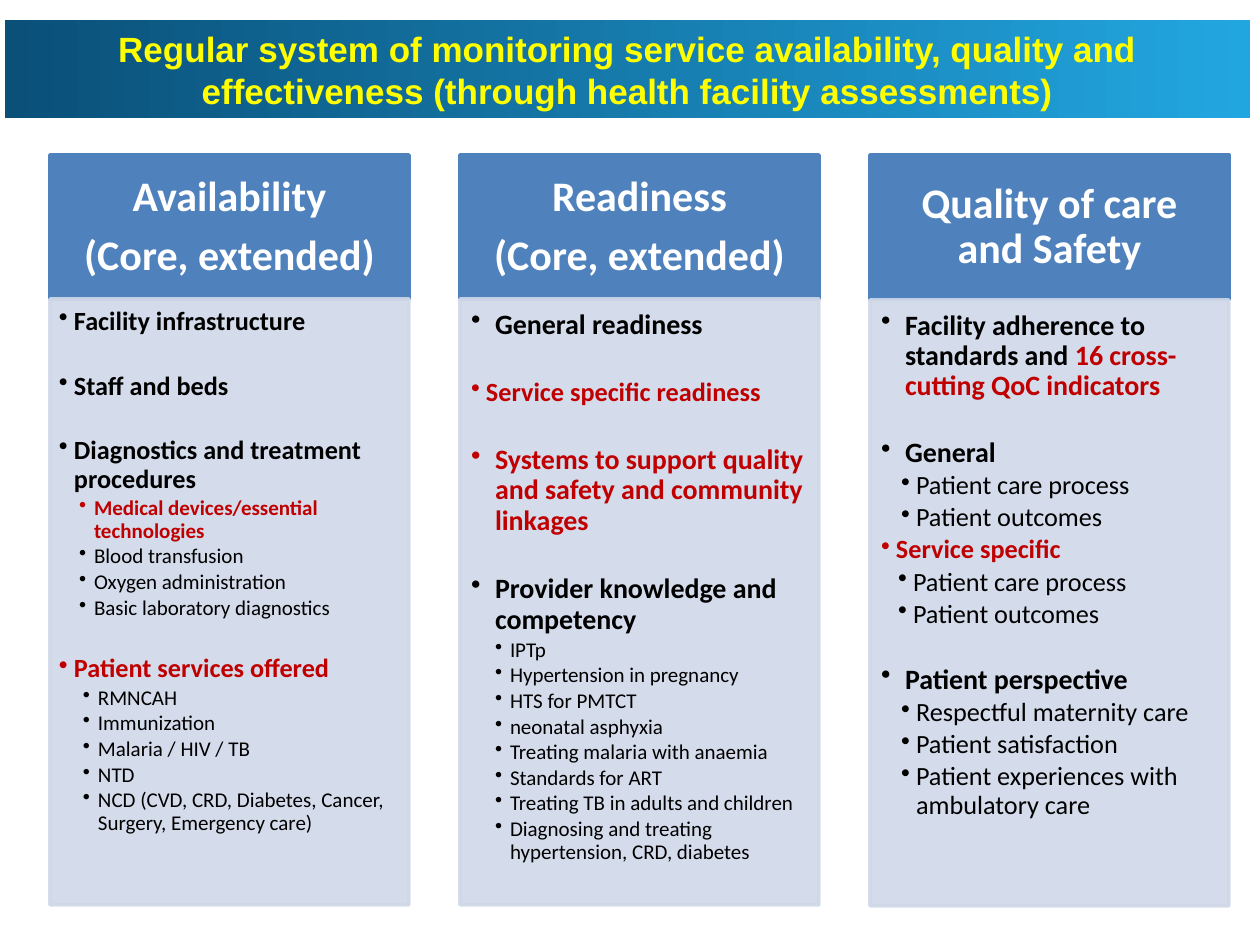
from lxml.etree import SubElement
from pptx import Presentation
from pptx.dml.color import RGBColor
from pptx.enum.shapes import MSO_SHAPE
from pptx.enum.text import MSO_ANCHOR, MSO_AUTO_SIZE, PP_ALIGN
from pptx.oxml.ns import qn
from pptx.util import Emu, Pt

PX_PER_INCH = 126
BLACK, RED, WHITE, YELLOW = "000000", "C00000", "FFFFFF", "FFFF00"
HEADER_BLUE, BODY_BLUE = "4F81BD", "D0D8E8"

# Column grid, in px
FIRST_LEFT, PITCH, WIDTH = 50, 410, 359
HEADER_TOP, HEADER_HEIGHT, BODY_HEIGHT = 155, 144, 606


def px(length):
    return Emu(round(length * 914400 / PX_PER_INCH))


def rgb(value):
    return RGBColor.from_string(value)


def topic(*runs, size=16, indent=24, color=BLACK, gap=0):
    """Bold bullet; gap is the text size of the free line above it."""
    return dict(runs=runs, size=size, indent=indent, hanging=indent,
                color=color, bold=True, gap=gap, level=1)


def details(*lines, size=12, indent=39, color=BLACK, bold=False, level=2):
    return [dict(runs=(line,), size=size, indent=indent, hanging=15,
                 color=color, bold=bold, gap=0, level=level) for line in lines]


COLUMNS = [
    dict(
        heading=["Availability", "(Core, extended)"],
        body_top=299,
        insets=(9, 9, 11, 13),
        items=[
            topic("Facility infrastructure", size=15, indent=15),
            topic("Staff and beds", size=15, indent=15, gap=15),
            topic("Diagnostics and treatment procedures", size=15, indent=15, gap=15),
            *details("Medical devices/essential technologies",
                     indent=35, color=RED, bold=True),
            *details("Blood transfusion", "Oxygen administration",
                     "Basic laboratory diagnostics", indent=35),
            topic("Patient services offered", size=15, indent=15, color=RED, gap=15),
            *details("RMNCAH", "Immunization", "Malaria / HIV / TB", "NTD",
                     "NCD (CVD, CRD, Diabetes, Cancer, Surgery, Emergency care)"),
        ],
    ),
    dict(
        heading=["Readiness", "(Core, extended)"],
        body_top=299,
        insets=(11, 11, 15, 17),
        items=[
            topic("General readiness"),
            topic("Service specific readiness", size=15, indent=15, color=RED, gap=16),
            topic("Systems to support quality and safety and community linkages",
                  color=RED, gap=16),
            topic("Provider knowledge and competency", gap=16),
            *details("IPTp", "Hypertension in pregnancy", "HTS for PMTCT",
                     "neonatal asphyxia", "Treating malaria with anaemia",
                     "Standards for ART", "Treating TB in adults and children",
                     "Diagnosing and treating hypertension, CRD, diabetes"),
        ],
    ),
    dict(
        heading=["Quality of care and Safety"],
        body_top=300,
        insets=(11, 11, 15, 17),
        items=[
            topic("Facility adherence to standards and ",
                  ("16 cross-cutting QoC indicators", RED)),
            topic("General", gap=15),
            *details("Patient care process", "Patient outcomes", size=15, indent=35),
            topic("Service specific", size=15, indent=15, color=RED),
            *details("Patient care process", "Patient outcomes", size=15, indent=32),
            topic("Patient perspective", gap=15),
            *details("Respectful maternity care", "Patient satisfaction",
                     "Patient experiences with ambulatory care",
                     size=15, indent=35, level=1),
        ],
    ),
]


def add_text(paragraph, text, size, color, bold=True, font="Calibri"):
    run = paragraph.add_run()
    run.text = text
    run.font.name = font
    run.font.size = Pt(size)
    run.font.bold = bold
    run.font.color.rgb = rgb(color)


def set_frame(frame, insets, anchor):
    frame.word_wrap = True
    frame.auto_size = MSO_AUTO_SIZE.NONE
    frame.vertical_anchor = anchor
    (frame.margin_left, frame.margin_top,
     frame.margin_right, frame.margin_bottom) = map(px, insets)


def next_paragraph(frame, index):
    return frame.add_paragraph() if index else frame.paragraphs[0]


def add_panel(slide, left, top, height, color, opacity=100):
    panel = slide.shapes.add_shape(
        MSO_SHAPE.RECTANGLE, px(left), px(top), px(WIDTH), px(height))
    panel.shadow.inherit = False
    panel.fill.solid()
    panel.fill.fore_color.rgb = rgb(color)
    panel.line.color.rgb = rgb(color)
    panel.line.width = Pt(2)
    if opacity < 100:
        for tint in panel._element.spPr.iter(qn("a:srgbClr")):
            SubElement(tint, qn("a:alpha"), val=str(opacity * 1000))
    return panel


def add_header(slide, left, heading):
    frame = add_panel(slide, left, HEADER_TOP, HEADER_HEIGHT, HEADER_BLUE).text_frame
    set_frame(frame, (24, 14, 24, 14), MSO_ANCHOR.MIDDLE)
    for index, line in enumerate(heading):
        paragraph = next_paragraph(frame, index)
        paragraph.alignment = PP_ALIGN.CENTER
        paragraph.line_spacing = 0.9
        paragraph.space_after = Pt(8)
        add_text(paragraph, line, size=24, color=WHITE)


def add_bullet(paragraph, item):
    paragraph.level = item["level"]
    paragraph.alignment = PP_ALIGN.LEFT
    paragraph.line_spacing = 0.9
    paragraph.space_before = Pt(1.24 * item["gap"])
    paragraph.space_after = Pt(0.14 * item["size"])
    properties = paragraph._p.get_or_add_pPr()
    properties.set("marL", str(px(item["indent"])))
    properties.set("indent", str(-px(item["hanging"])))
    SubElement(properties, qn("a:buChar"), char="•")
    for part in item["runs"]:
        text, color = (part, item["color"]) if isinstance(part, str) else part
        add_text(paragraph, text, size=item["size"], color=color, bold=item["bold"])


def add_body(slide, left, column):
    frame = add_panel(slide, left, column["body_top"], BODY_HEIGHT,
                      BODY_BLUE, opacity=90).text_frame
    set_frame(frame, column["insets"], MSO_ANCHOR.TOP)
    for index, item in enumerate(column["items"]):
        add_bullet(next_paragraph(frame, index), item)


def format_title(slide, text):
    title = slide.shapes.title
    title.left, title.top, title.width, title.height = map(px, (5, 20, 1245, 98))
    title.fill.gradient()
    title.fill.gradient_angle = 0
    for stop, position, color in zip(title.fill.gradient_stops, (0, 1),
                                     ("0A5079", "22A6E0")):
        stop.position = position
        stop.color.rgb = rgb(color)
    set_frame(title.text_frame, (13, 6, 13, 6), MSO_ANCHOR.MIDDLE)
    paragraph = title.text_frame.paragraphs[0]
    paragraph.alignment = PP_ALIGN.CENTER
    add_text(paragraph, text, size=20, color=YELLOW, font="Arial")


def main():
    deck = Presentation()
    deck.slide_width, deck.slide_height = px(1260), px(945)
    slide = deck.slides.add_slide(deck.slide_layouts[5])

    # Title banner
    format_title(slide, "Regular system of monitoring service availability, quality "
                        "and effectiveness (through health facility assessments)")

    # Assessment columns
    for index, column in enumerate(COLUMNS):
        left = FIRST_LEFT + index * PITCH
        add_header(slide, left, column["heading"])
        add_body(slide, left, column)

    deck.save("out.pptx")


if __name__ == "__main__":
    main()
